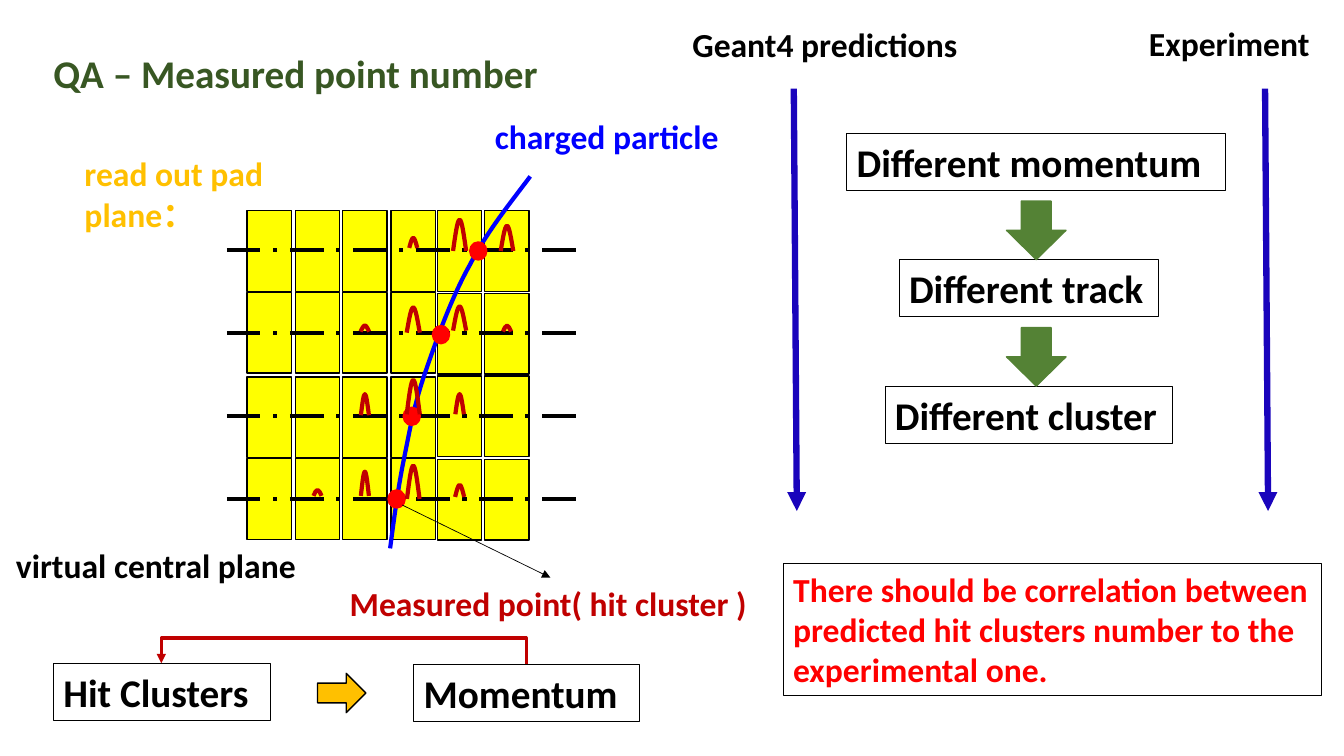
"""Build the slide on measured point numbers in a read-out pad plane."""
from dataclasses import dataclass
from itertools import product
from typing import NamedTuple, Optional

from lxml.etree import SubElement
from pptx import Presentation
from pptx.dml.color import RGBColor
from pptx.enum.dml import MSO_LINE_DASH_STYLE as Dash
from pptx.enum.shapes import MSO_CONNECTOR as Connector
from pptx.enum.shapes import MSO_SHAPE as Preset
from pptx.enum.text import MSO_ANCHOR as Anchor
from pptx.enum.text import MSO_AUTO_SIZE as AutoSize
from pptx.enum.text import PP_ALIGN as Align
from pptx.oxml.ns import qn
from pptx.slide import Slide
from pptx.util import Emu, Inches, Pt

CELL = Inches(0.1)
COLUMNS, ROWS = 133.33, 75


@dataclass(frozen=True)
class Theme:
    font: str = "Calibri"
    large: int = 28
    normal: int = 24
    black: str = "000000"
    title: str = "385723"
    pad: str = "FFFF00"
    track: str = "0000FF"
    gold: str = "FFC000"
    point: str = "FF0000"
    peak: str = "C00000"
    step: str = "548235"
    flow: str = "1A04BC"


THEME = Theme()


class Box(NamedTuple):
    column: float
    row: float
    width: float
    height: float


class Point(NamedTuple):
    column: float
    row: float


class PadBlock(NamedTuple):
    columns: tuple[float, ...]
    rows: tuple[float, ...]


class Label(NamedTuple):
    text: str
    box: Box
    size: int
    color: str
    framed: bool = False


class Peak(NamedTuple):
    pad_column: int
    base: float
    width: float
    height: float


class Arrow(NamedTuple):
    begin: Point
    end: Point
    color: str
    weight: float


PAD_WIDTH, PAD_HEIGHT = 4.4, 8
PAD_BLOCKS = [PadBlock((24.5, 29.3, 34, 38.8), (20.9, 29, 37.4, 45.5)),
              PadBlock((43.4, 48.1), (20.9, 29.1, 37.3, 45.6))]
PAD_COLUMNS = [column for block in PAD_BLOCKS for column in block.columns]
PLANES = [24.8 + 8.23 * index for index in range(4)]
PLANE_LEFT, PLANE_RIGHT = 22.5, 57.8
TRACK = [Point(*pair) for pair in (
    (38.7, 54.4), (39.1, 51.4), (39.5, 48.3), (40.1, 45.4),
    (40.7, 42.4), (41.1, 40.1), (42.2, 36.9),
    (43.3, 33.7), (44.8, 29.5), (46.6, 26.3),
    (48.3, 23), (50.5, 20.3), (52.6, 17.5))]
HITS = [Point(38.5, 48.6), Point(40, 40.4), Point(42.9, 32.3), Point(46.6, 24)]
PEAKS = [
    Peak(3, 49.5, 1.25, 3.3), Peak(2, 49.2, 0.8, 2.4), Peak(4, 49.3, 0.9, 1.2),
    Peak(1, 49.2, 0.8, 0.6), Peak(3, 41.1, 1.3, 3.4), Peak(2, 41.2, 0.8, 2.1),
    Peak(4, 41.1, 0.85, 2), Peak(3, 33, 1.3, 2.5), Peak(4, 32.8, 1.3, 2.4),
    Peak(2, 32.9, 0.85, 0.6), Peak(5, 32.9, 0.8, 0.6), Peak(5, 24.9, 1.25, 2.5),
    Peak(4, 24.9, 1.3, 3.1), Peak(3, 24.6, 0.8, 1)]
LABELS = [
    Label("charged particle", Box(48.1, 11, 24.5, 5), THEME.normal, THEME.track),
    Label("virtual central plane", Box(0.6, 53.6, 30.1, 5), THEME.normal, THEME.black),
    Label("read out pad plane：", Box(7.4, 14.7, 22, 9), THEME.normal, THEME.gold),
    Label("Measured point( hit cluster )", Box(33.7, 57.3, 41.8, 5), THEME.normal, THEME.peak),
    Label("Geant4 predictions", Box(67.7, 1.9, 31.2, 5), THEME.normal, THEME.black),
    Label("Experiment", Box(113, 1.8, 18.2, 5), THEME.normal, THEME.black),
    Label("Momentum", Box(41.05, 65.9, 22.4, 5.7), THEME.large, THEME.black, True),
    Label("Hit Clusters", Box(5.3, 65.8, 21.5, 5.7), THEME.large, THEME.black, True),
    Label("Different momentum", Box(84, 13.2, 37.6, 5.7), THEME.large, THEME.black, True),
    Label("Different track", Box(89.2, 25.75, 25.7, 5.7), THEME.large, THEME.black, True),
    Label("Different cluster", Box(87.8, 38.3, 28.5, 5.7), THEME.large, THEME.black, True),
    Label("There should be correlation between predicted hit clusters number to the experimental one.",
          Box(77.7, 55.9, 53.4, 13.1), THEME.normal, THEME.point, True)]
ARROWS = [Arrow(Point(39.9, 50.1), Point(54.6, 57.3), THEME.black, 0.5),
          Arrow(Point(78.75, 8.8), Point(79.05, 50.7), THEME.flow, 4.5),
          Arrow(Point(125.5, 8.8), Point(125.8, 50.7), THEME.flow, 4.5)]


def cells(*counts: float) -> list[Emu]:
    """Turn counts of grid cells into lengths."""
    return [Emu(round(count * CELL)) for count in counts]


def set_line(shape, color: str, weight: float) -> None:
    """Colour the outline of a shape."""
    shape.line.color.rgb = RGBColor.from_string(color)
    shape.line.width = Pt(weight)


def write(shape, text: str, size: int, color: str) -> None:
    """Put bold left-aligned text at the top of a shape."""
    frame = shape.text_frame
    frame.word_wrap = True
    frame.auto_size = AutoSize.NONE
    frame.vertical_anchor = Anchor.TOP
    frame.text = text
    paragraph = frame.paragraphs[0]
    paragraph.alignment = Align.LEFT
    font = paragraph.font
    font.name, font.size, font.bold = THEME.font, Pt(size), True
    font.color.rgb = RGBColor.from_string(color)


def add_preset(slide: Slide, preset: Preset, box: Box, fill: Optional[str], line: str, weight: float = 1):
    """Draw a preset shape without a shadow."""
    shape = slide.shapes.add_shape(preset, *cells(*box))
    shape.shadow.inherit = False
    if fill:
        shape.fill.solid()
        shape.fill.fore_color.rgb = RGBColor.from_string(fill)
    else:
        shape.fill.background()
    set_line(shape, line, weight)
    return shape


def add_label(slide: Slide, label: Label) -> None:
    """Draw a text, framed or free."""
    if label.framed:
        shape = add_preset(slide, Preset.RECTANGLE, label.box, None, THEME.black, 0.75)
    else:
        shape = slide.shapes.add_textbox(*cells(*label.box))
    write(shape, label.text, label.size, label.color)


def add_curve(slide: Slide, points: list[Point], color: str) -> None:
    """Draw joined cubic curves, each with two control points and an end."""
    builder = slide.shapes.build_freeform(*cells(*points[0]), scale=1.0)
    builder.add_line_segments([cells(*point) for point in points[1:]], close=False)
    curve = builder.convert_to_shape()
    segments = list(curve._element.iter(qn("a:lnTo")))
    for first, second, third in zip(segments[::3], segments[1::3], segments[2::3]):
        first.tag = qn("a:cubicBezTo")
        for segment in (second, third):
            first.append(segment[0])
            segment.getparent().remove(segment)
    curve.shadow.inherit = False
    curve.fill.background()
    set_line(curve, color, 3)


def add_peak(slide: Slide, peak: Peak) -> None:
    """Draw the signal peak of one pad."""
    middle = PAD_COLUMNS[peak.pad_column] + PAD_WIDTH / 2
    shares = ((-0.5, 0), (-0.33, 0.5), (-0.17, 1), (0, 1), (0.17, 1), (0.33, 0.5), (0.5, 0))
    points = [Point(middle + x * peak.width, peak.base - y * peak.height) for x, y in shares]
    add_curve(slide, points, THEME.peak)


def add_connector(slide: Slide, arrow: Arrow, kind: Connector = Connector.STRAIGHT,
                  dash: Optional[Dash] = None, head: bool = True):
    """Draw a connector without a shadow, dashed or with an arrowhead."""
    connector = slide.shapes.add_connector(kind, *cells(*arrow.begin, *arrow.end))
    set_line(connector, arrow.color, arrow.weight)
    if dash:
        connector.line.dash_style = dash
    if head:
        SubElement(connector.line._get_or_add_ln(), qn("a:tailEnd"), type="triangle")
    SubElement(connector._element.spPr, qn("a:effectLst"))
    return connector


def add_feedback(slide: Slide) -> None:
    """Draw the bent arrow from the momentum back to the hit clusters."""
    arrow = Arrow(Point(52.2, 65.9), Point(16, 65.8), THEME.peak, 2.25)
    connector = add_connector(slide, arrow, Connector.ELBOW)
    connector.left, connector.top, connector.width, connector.height = cells(34.05, 47.75, 0.1, 36.2)
    properties = connector._element.spPr
    frame = properties.find(qn("a:xfrm"))
    frame.attrib.clear()
    frame.set("rot", "16200000")
    frame.set("flipV", "1")
    adjustments = properties.find(qn("a:prstGeom")).find(qn("a:avLst"))
    SubElement(adjustments, qn("a:gd"), name="adj1", fmla="val 2650000")


def main() -> None:
    """Build and save the presentation."""
    presentation = Presentation()
    presentation.slide_width, presentation.slide_height = cells(COLUMNS, ROWS)
    slide = presentation.slides.add_slide(presentation.slide_layouts[5])
    title = slide.shapes.title
    title.left, title.top, title.width, title.height = cells(4.3, 2.1, 53.5, 8.1)
    write(title, "QA – Measured point number", THEME.large, THEME.title)
    title.text_frame.paragraphs[0].line_spacing = 1.5

    for block in PAD_BLOCKS:
        for row, column in product(block.rows, block.columns):
            add_preset(slide, Preset.RECTANGLE, Box(column, row, PAD_WIDTH, PAD_HEIGHT), THEME.pad, THEME.black)
    add_curve(slide, TRACK, THEME.track)
    for row in PLANES:
        plane = Arrow(Point(PLANE_LEFT, row), Point(PLANE_RIGHT, row), THEME.black, 3)
        add_connector(slide, plane, dash=Dash.LONG_DASH_DOT, head=False)
    for hit in HITS:
        add_preset(slide, Preset.OVAL, Box(*hit, 1.7, 1.8), THEME.point, THEME.point)
    for peak in PEAKS:
        add_peak(slide, peak)
    for label in LABELS:
        add_label(slide, label)
    for row in (19.95, 32.5):
        add_preset(slide, Preset.DOWN_ARROW, Box(99.85, row, 5.9, 5.8), THEME.step, THEME.step)
    add_preset(slide, Preset.RIGHT_ARROW, Box(31.5, 66.8, 4.8, 3.9), THEME.gold, THEME.black)
    for arrow in ARROWS:
        add_connector(slide, arrow)
    add_feedback(slide)
    presentation.save("out.pptx")


if __name__ == "__main__":
    main()
